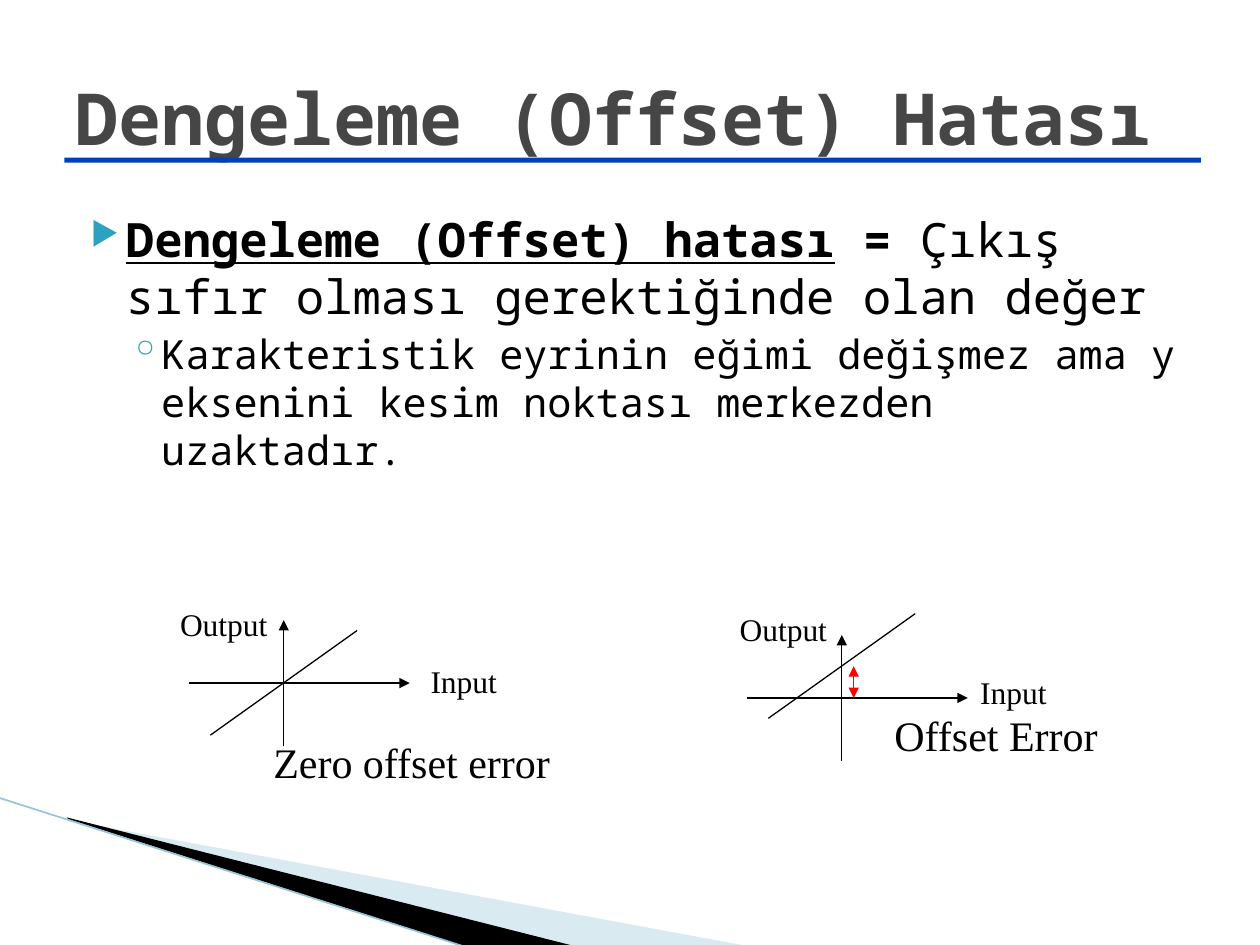
"""Build a slide on offset error with two small characteristic graphs."""
from lxml import etree
from pptx import Presentation
from pptx.dml.color import RGBColor
from pptx.enum.shapes import MSO_CONNECTOR, MSO_SHAPE
from pptx.enum.text import MSO_ANCHOR, MSO_AUTO_SIZE, PP_ALIGN
from pptx.oxml.ns import qn
from pptx.util import Cm, Pt

STRAIGHT, RECT = MSO_CONNECTOR.STRAIGHT, MSO_SHAPE.RECTANGLE
MIDDLE, LEFT = MSO_ANCHOR.MIDDLE, PP_ALIGN.LEFT
FIT, FIXED = MSO_AUTO_SIZE.SHAPE_TO_FIT_TEXT, MSO_AUTO_SIZE.NONE

BLACK = RGBColor(0x00, 0x00, 0x00)
GRAY = RGBColor(0x46, 0x46, 0x46)
TEAL = RGBColor(0x2D, 0xA2, 0xBF)
PALE = RGBColor(0xA0, 0xCB, 0xDC)
EDGE = RGBColor(0x97, 0xC5, 0xD8)
BLUE = RGBColor(0x00, 0x40, 0xC0)
RED = RGBColor(0xFF, 0x00, 0x00)

MONO = {"name": "Noto Sans Mono"}
HEAD = {**MONO, "size": Pt(41), "bold": True}
LEAD = {**MONO, "size": Pt(27), "bold": True}
TERM = {**LEAD, "underline": True}
PLAIN = {**LEAD, "bold": False}
SUB = {**PLAIN, "size": Pt(23)}
LABEL = {"name": "Times New Roman", "size": Pt(18)}
CAPTION = {**LABEL, "size": Pt(24)}


def add_run(para, text, style, color=BLACK):
    """Add a run and set its font from a dict."""
    run = para.add_run()
    run.text = text
    for key, value in style.items():
        setattr(run.font, key, value)
    run.font.color.rgb = color


def add_node(parent, tag, **attrs):
    """Append a drawing element to a parent."""
    return etree.SubElement(parent, qn(tag), attrs)


def add_bullet(para, char, left, hang, scale):
    """Give a paragraph a hanging bullet."""
    props = para._p.get_or_add_pPr()
    props.set("marL", str(Cm(left)))
    props.set("indent", str(-Cm(hang)))
    add_node(add_node(props, "a:buClr"), "a:srgbClr", val=str(TEAL))
    add_node(props, "a:buSzPct", val=str(scale * 1000))
    add_node(props, "a:buChar", char=char)


def add_line(slide, start, end, color=BLACK, width=0.75, ends=()):
    """Draw a straight line with optional arrowheads."""
    line = slide.shapes.add_connector(STRAIGHT, *map(Cm, start + end))
    line.line.color.rgb = color
    line.line.width = Pt(width)
    for tag in ends:
        add_node(line.line._get_or_add_ln(), tag, type="triangle")
    add_node(line._element.spPr, "a:effectLst")


def paint(shape, color, alpha=100):
    """Fill a shape flatly with no outline or shadow."""
    shape.shadow.inherit = False
    shape.line.fill.background()
    shape.fill.solid()
    shape.fill.fore_color.rgb = color
    if alpha < 100:
        fill = shape._element.spPr.find(qn("a:solidFill"))
        add_node(fill[0], "a:alpha", val=str(alpha * 1000))


def add_wedge(slide, points, color, alpha=100):
    """Draw a filled polygon."""
    first, *rest = [(Cm(x), Cm(y)) for x, y in points]
    form = slide.shapes.build_freeform(*first)
    form.add_line_segments(rest, close=True)
    paint(form.convert_to_shape(), color, alpha)


def add_label(slide, text, box, style):
    """Place a one-line label."""
    frame = slide.shapes.add_textbox(*map(Cm, box)).text_frame
    frame.word_wrap = False
    frame.auto_size = FIT
    add_run(frame.paragraphs[0], text, style)


def add_graph(slide, x, y, rise=0):
    """Draw axes and a slanted line raised by an offset."""
    add_line(slide, (x, y - 1.27), (x, y + 1.27), ends=["a:headEnd"])
    add_line(slide, (x - 1.91, y), (x + 2.54, y), ends=["a:tailEnd"])
    add_line(slide, (x - 1.48, y + 1.05 - rise), (x + 1.48, y - 1.06 - rise))
    if rise:
        add_line(slide, (x + 0.24, y - rise), (x + 0.24, y), RED,
                 ends=["a:headEnd", "a:tailEnd"])


def set_title(slide, text):
    """Place and format the title."""
    title = slide.shapes.title
    title.left, title.top, title.width, title.height = map(
        Cm, (1.27, 0.76, 22.86, 3.18))
    frame = title.text_frame
    frame.vertical_anchor, frame.auto_size = MIDDLE, FIXED
    para = frame.paragraphs[0]
    para.alignment = LEFT
    add_run(para, text, HEAD, GRAY)


def add_body(slide):
    """Add the definition and its remark."""
    frame = slide.shapes.add_textbox(
        *map(Cm, (1.27, 4.11, 22.86, 12.57))).text_frame
    frame.word_wrap = True
    lead = frame.paragraphs[0]
    add_bullet(lead, "▶", 1.02, 0.71, 68)
    add_run(lead, "Dengeleme (Offset) hatası", TERM)
    add_run(lead, " = ", LEAD)
    add_run(lead, "Çıkış sıfır olması gerektiğinde olan değer", PLAIN)
    note = frame.add_paragraph()
    note.level = 1
    note.space_before = Pt(3.2)
    add_bullet(note, "◦", 1.73, 0.64, 100)
    add_run(note, "Karakteristik eyrinin eğimi değişmez ama y eksenini "
            "kesim noktası merkezden uzaktadır.", SUB)


def main():
    """Build and save the slide."""
    deck = Presentation()
    deck.slide_width, deck.slide_height = Cm(25.4), Cm(19.05)
    slide = deck.slides.add_slide(deck.slide_layouts[5])
    add_wedge(slide, [(1.4, 16.54), (15.11, 19.08), (11.58, 19.08),
                      (1.4, 16.51)], PALE, 40)
    add_wedge(slide, [(1.35, 16.48), (11.61, 19.08), (9.45, 19.1),
                      (1.37, 16.51)], BLACK)
    add_line(slide, (-0.03, 16.08), (9.42, 19.1), EDGE, 0.95)
    set_title(slide, "Dengeleme (Offset) Hatası")
    add_body(slide)
    add_graph(slide, 5.72, 13.77)
    add_graph(slide, 16.97, 14.07, 0.64)
    add_label(slide, "Zero offset error", (5.26, 14.73, 6.1, 1.27), CAPTION)
    add_label(slide, "Offset Error", (17.78, 14.17, 4.62, 1.27), CAPTION)
    for x, y in (8.43, 13.23), (19.51, 13.44):
        add_label(slide, "Input", (x, y, 1.85, 1.02), LABEL)
    for x, y in (3.38, 12.07), (14.66, 12.17):
        add_label(slide, "Output", (x, y, 2.29, 1.02), LABEL)
    rule = slide.shapes.add_shape(RECT, *map(Cm, (1.3, 3.18, 22.91, 0.1)))
    paint(rule, BLUE)
    deck.save("out.pptx")


if __name__ == "__main__":
    main()
